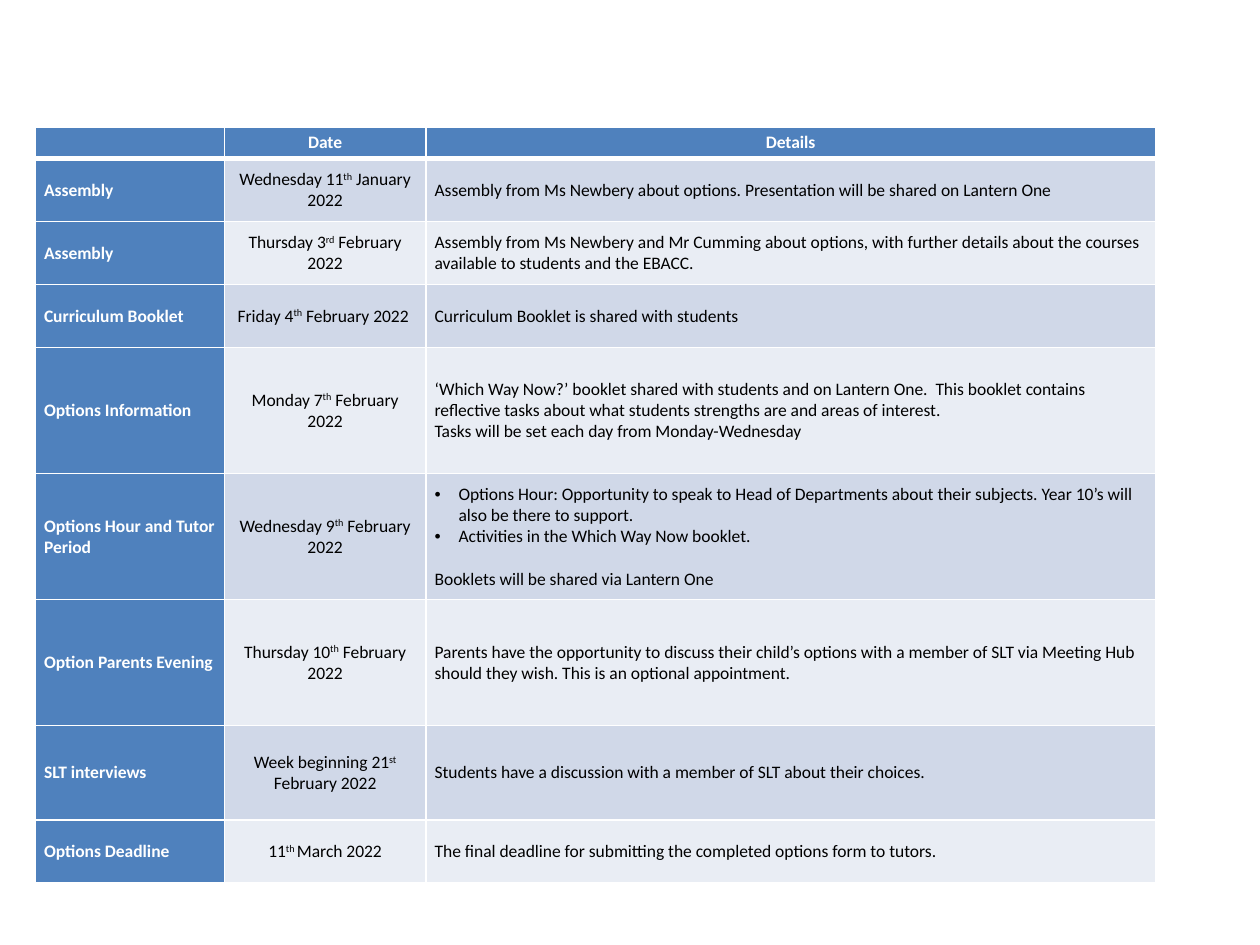
from lxml.etree import SubElement
from pptx import Presentation
from pptx.dml.color import RGBColor
from pptx.enum.text import MSO_ANCHOR as Anchor, PP_ALIGN as Align
from pptx.oxml.ns import qn
from pptx.util import Inches, Pt

COLORS = {"head": "4F81BD", "odd": "D0D8E8", "even": "E9EDF4",
          "line": "FFFFFF", "light": "FFFFFF", "dark": "000000"}
FONT = {"name": "Calibri", "size": Pt(10)}
CELL = {"margin_left": Inches(0.07), "margin_right": Inches(0.07),
        "margin_top": 0, "margin_bottom": 0, "vertical_anchor": Anchor.MIDDLE}
COLUMNS = [1.5, 1.6, 5.79]
BULLET = "• "

# Event, date split around its raised ordinal, details, row height
HEADINGS = ["", "Date", "Details"]
EVENTS = [
    ("Assembly", ("Wednesday 11", "th", " January 2022"),
     ["Assembly from Ms Newbery about options. Presentation will be shared on Lantern One"], 0.5),
    ("Assembly", ("Thursday 3", "rd", " February 2022"),
     ["Assembly from Ms Newbery and Mr Cumming about options, with further details about "
      "the courses available to students and the EBACC."], 0.5),
    ("Curriculum Booklet", ("Friday 4", "th", " February 2022 "),
     ["Curriculum Booklet is shared with students"], 0.5),
    ("Options Information", ("Monday 7", "th", " February 2022"),
     ["‘Which Way Now?’ booklet shared with students and on Lantern One.  This booklet "
      "contains reflective tasks about what students strengths are and areas of interest.",
      "Tasks will be set each day from Monday-Wednesday"], 1),
    ("Options Hour and Tutor Period", ("Wednesday 9", "th", " February 2022"),
     [BULLET + "Options Hour: Opportunity to speak to Head of Departments about their "
      "subjects. Year 10’s will also be there to support.",
      BULLET + "Activities in the Which Way Now booklet.",
      "Booklets will be shared via Lantern One"], 1),
    ("Option Parents Evening", ("Thursday 10", "th", " February 2022"),
     ["Parents have the opportunity to discuss their child’s options with a member of SLT "
      "via Meeting Hub should they wish. This is an optional appointment."], 1),
    ("SLT interviews", ("Week beginning 21", "st", " February 2022"),
     ["Students have a discussion with a member of SLT about their choices."], 0.75),
    ("Options Deadline", ("11", "th ", "March 2022"),
     ["The final deadline for submitting the completed options form to tutors."], 0.5),
]


def apply(target, values):
    for name, value in values.items():
        setattr(target, name, value)


def style_cell(cell, fill, bottom=1):
    """Set the insets, white borders and fill of a cell."""
    apply(cell, CELL)
    props = cell._tc.get_or_add_tcPr()
    for side, width in {"L": 1, "R": 1, "T": 1, "B": bottom}.items():
        line = SubElement(props, qn(f"a:ln{side}"), w=str(Pt(width)))
        solid = SubElement(line, qn("a:solidFill"))
        SubElement(solid, qn("a:srgbClr"), val=COLORS["line"])
    cell.fill.solid()
    cell.fill.fore_color.rgb = RGBColor.from_string(COLORS[fill])


def add_span(para, text, color="dark", bold=False, raised=False):
    span = para.add_run()
    span.text = text
    apply(span.font, {**FONT, "bold": bold})
    span.font.color.rgb = RGBColor.from_string(COLORS[color])
    if raised:
        span._r.get_or_add_rPr().set("baseline", "30000")


def write_label(cell, text, align=Align.LEFT):
    para = cell.text_frame.paragraphs[0]
    para.alignment = align
    if text:
        add_span(para, text, "light", True)
    else:
        SubElement(para._p, qn("a:endParaRPr"), sz="1000")


def write_date(cell, parts):
    para = cell.text_frame.paragraphs[0]
    para.alignment = Align.CENTER
    for index, part in enumerate(parts):
        add_span(para, part, raised=index == 1)


def write_details(cell, lines):
    frame = cell.text_frame
    after_bullet = False
    for index, line in enumerate(lines):
        para = frame.add_paragraph() if index else frame.paragraphs[0]
        bulleted = line.startswith(BULLET)
        if bulleted:
            props = para._p.get_or_add_pPr()
            props.set("marL", str(Inches(0.19)))
            props.set("indent", str(-Inches(0.19)))
            SubElement(props, qn("a:buFont"), typeface="Arial")
            SubElement(props, qn("a:buChar"), char=BULLET.strip())
        elif after_bullet:
            para.space_before = Pt(12.2)
        add_span(para, line.removeprefix(BULLET))
        after_bullet = bulleted


def add_timeline(page, left, top, width, height):
    """Table of option events within the given box."""
    table = page.shapes.add_table(len(EVENTS) + 1, len(COLUMNS),
                                  left, top, width, height).table
    table.first_col = True
    for column, size in zip(table.columns, COLUMNS):
        column.width = Inches(size)

    # Header row
    table.rows[0].height = Inches(0.25)
    for cell, heading in zip(table.rows[0].cells, HEADINGS):
        style_cell(cell, "head", bottom=3)
        write_label(cell, heading, Align.CENTER)

    # Event rows
    for number, (event, date, details, size) in enumerate(EVENTS, 1):
        table.rows[number].height = Inches(size)
        band = "odd" if number % 2 else "even"
        name_cell, date_cell, details_cell = table.rows[number].cells
        style_cell(name_cell, "head")
        style_cell(date_cell, band)
        style_cell(details_cell, band)
        write_label(name_cell, event)
        write_date(date_cell, date)
        write_details(details_cell, details)


def main():
    deck = Presentation()
    deck.slide_width, deck.slide_height = Inches(10), Inches(7.5)
    page = deck.slides.add_slide(deck.slide_layouts[6])
    add_timeline(page, Inches(0.28), Inches(1.01), Inches(8.89), Inches(6))
    deck.save("out.pptx")


if __name__ == "__main__":
    main()
